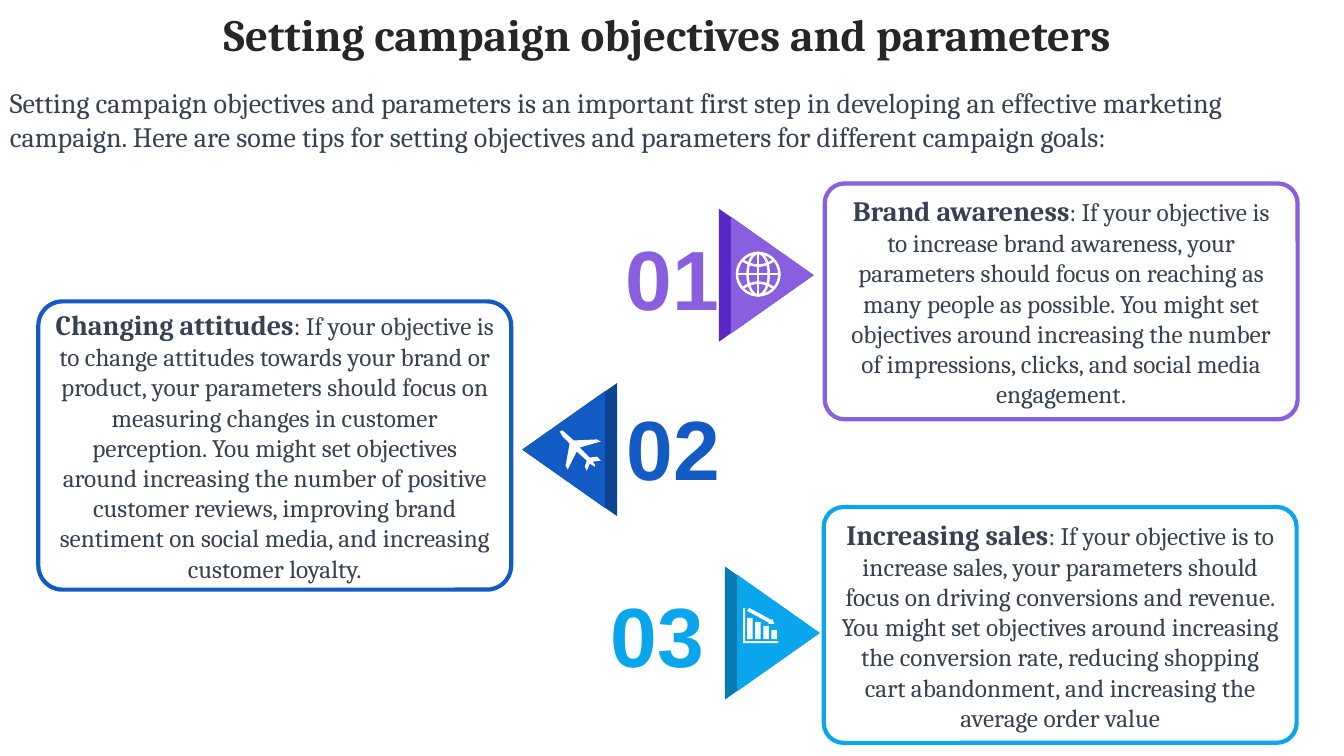
"""Builds a slide on setting campaign objectives and parameters."""
import math
import pptx
import pptx.util
import pptx.dml.color
import pptx.enum.shapes
import pptx.enum.text

Inches, Pt = pptx.util.Inches, pptx.util.Pt
MIDDLE = pptx.enum.text.MSO_ANCHOR.MIDDLE
CENTER = pptx.enum.text.PP_ALIGN.CENTER
SHAPES = pptx.enum.shapes.MSO_SHAPE

TITLE = "Setting campaign objectives and parameters"
INTRO = ("Setting campaign objectives and parameters is an important first step in developing "
         "an effective marketing campaign. Here are some tips for setting objectives and "
         "parameters for different campaign goals:")
INK, WHITE = "374151", "FFFFFF"

GOALS = [
    dict(number="03", color="0AA6ED", shade="087CB2", card=(8.17, 5.03, 4.69, 2.34),
         triangle=(7.66, 6.28), turn=90, label=(5.95, 5.73), name="Increasing sales",
         advice=": If your objective is to increase sales, your parameters should focus on "
                "driving conversions and revenue. You might set objectives around increasing "
                "the conversion rate, reducing shopping cart abandonment, and increasing the "
                "average order value"),
    dict(number="02", color="125AC4", shade="0D4393", card=(0.38, 2.99, 4.69, 2.86),
         triangle=(5.65, 4.46), turn=270, label=(6.11, 3.88), name="Changing attitudes",
         advice=": If your objective is to change attitudes towards your brand or product, your "
                "parameters should focus on measuring changes in customer perception. You might "
                "set objectives around increasing the number of positive customer reviews, "
                "improving brand sentiment on social media, and increasing customer loyalty."),
    dict(number="01", color="875FDF", shade="5928C7", card=(8.18, 1.82, 4.69, 2.34),
         triangle=(7.6, 2.73), turn=90, label=(6.1, 2.19), name="Brand awareness",
         advice=": If your objective is to increase brand awareness, your parameters should "
                "focus on reaching as many people as possible. You might set objectives around "
                "increasing the number of impressions, clicks, and social media engagement."),
]

BAR_TOPS = [6.13, 6.17, 6.21, 6.25]
CHART_AXES = [(7.37, 6.03), (7.39, 6.03), (7.39, 6.36), (7.72, 6.36), (7.72, 6.38), (7.37, 6.38)]
CHART_ARROW = [(7.43, 6.03), (7.65, 6.15), (7.66, 6.14), (7.68, 6.19), (7.62, 6.19),
               (7.63, 6.18), (7.41, 6.06)]
PLANE = [(5.96, 4.57), (5.88, 4.58), (5.9, 4.61), (5.9, 4.63), (5.85, 4.6), (5.82, 4.67),
         (5.8, 4.63), (5.82, 4.57), (5.72, 4.48), (5.63, 4.66), (5.61, 4.62), (5.65, 4.4),
         (5.58, 4.33), (5.55, 4.28), (5.58, 4.27), (5.69, 4.37), (5.92, 4.36), (5.96, 4.38),
         (5.75, 4.44), (5.85, 4.54), (5.92, 4.53)]
GLOBE_X, GLOBE_Y, GLOBE_RADIUS = 7.52, 2.72, 0.21


def rgb(color):
    return pptx.dml.color.RGBColor.from_string(color)


def style_shape(shape, fill=None, line=None, width=0):
    shape.shadow.inherit = False
    if fill:
        shape.fill.solid()
        shape.fill.fore_color.rgb = rgb(fill)
    else:
        shape.fill.background()
    if line:
        shape.line.color.rgb = rgb(line)
        shape.line.width = Pt(width)
    else:
        shape.line.fill.background()


def style_font(font, size, color, bold=False, name="Cambria"):
    font.name, font.size, font.bold = name, Pt(size), bold
    font.color.rgb = rgb(color)


def add_text(page, text, place, size, color, bold=False, name="Cambria"):
    box = page.shapes.add_textbox(*map(Inches, place))
    box.text_frame.word_wrap = True
    box.text_frame.text = text
    para = box.text_frame.paragraphs[0]
    style_font(para.runs[0].font, size, color, bold, name)
    return box.text_frame


def add_card(page, goal):
    card = page.shapes.add_shape(SHAPES.ROUNDED_RECTANGLE, *map(Inches, goal["card"]))
    card.adjustments[0] = 0.084
    style_shape(card, WHITE, goal["color"], 3)
    frame = card.text_frame
    frame.word_wrap, frame.vertical_anchor = True, MIDDLE
    para = frame.paragraphs[0]
    para.alignment = CENTER
    for text, size, bold in ((goal["name"], 20, True), (goal["advice"], 18, False)):
        span = para.add_run()
        span.text = text
        style_font(span.font, size, INK, bold)


def add_triangles(page, goal):
    x, y = goal["triangle"]
    toward_tip = 0.06 if goal["turn"] == 90 else -0.06
    for center, width, height, color in ((x, 1.32, 0.94, goal["shade"]),
                                         (x + toward_tip, 1.16, 0.82, goal["color"])):
        triangle = page.shapes.add_shape(
            SHAPES.ISOSCELES_TRIANGLE, Inches(center - width / 2), Inches(y - height / 2),
            Inches(width), Inches(height))
        triangle.rotation = goal["turn"]
        style_shape(triangle, color)


def add_outline(page, contours, closed=True):
    builder = None
    for contour in contours:
        points = [(Inches(x), Inches(y)) for x, y in contour]
        if builder is None:
            builder = page.shapes.build_freeform(*points[0], scale=1.0)
        else:
            builder.move_to(*points[0])
        builder.add_line_segments(points[1:], close=closed)
    return builder.convert_to_shape()


def ellipse(radius_x, radius_y, steps=48):
    angles = [2 * math.pi * step / steps for step in range(steps + 1)]
    return [(GLOBE_X + radius_x * math.cos(a), GLOBE_Y + radius_y * math.sin(a)) for a in angles]


def parallel(side):
    return [(GLOBE_X + 0.15 * t / 8, GLOBE_Y + side * (0.085 + 0.05 * (t / 8) ** 2))
            for t in range(-8, 9)]


def globe_lines():
    r = GLOBE_RADIUS
    return [ellipse(r, r), ellipse(0.105, r), parallel(-1), parallel(1),
            [(GLOBE_X - r, GLOBE_Y), (GLOBE_X + r, GLOBE_Y)],
            [(GLOBE_X, GLOBE_Y - r), (GLOBE_X, GLOBE_Y + r)]]


def chart_bars():
    lefts = [7.41 + 0.08 * index for index in range(len(BAR_TOPS))]
    return [[(x, top), (x + 0.055, top), (x + 0.055, 6.34), (x, 6.34)]
            for x, top in zip(lefts, BAR_TOPS)]


def main():
    deck = pptx.Presentation()
    deck.slide_width, deck.slide_height = Inches(13.33), Inches(7.5)
    page = deck.slides.add_slide(deck.slide_layouts[5])

    title = page.shapes.title
    title.left, title.top, title.width, title.height = map(Inches, (0.29, 0, 12.66, 0.74))
    title.text_frame.text = TITLE
    title.text_frame.vertical_anchor = MIDDLE
    heading = title.text_frame.paragraphs[0]
    heading.alignment, heading.line_spacing = CENTER, 0.9
    style_font(heading.runs[0].font, 32, "262626", True)

    for goal in GOALS:
        add_card(page, goal)
        add_triangles(page, goal)
        frame = add_text(page, goal["number"], (*goal["label"], 1.14, 1.11), 60,
                         goal["color"], True, "Arial")
        frame.vertical_anchor = MIDDLE
        frame.paragraphs[0].alignment = CENTER

    style_shape(add_outline(page, chart_bars() + [CHART_ARROW, CHART_AXES]), WHITE)
    style_shape(add_outline(page, globe_lines(), closed=False), line=WHITE, width=1.8)
    style_shape(add_outline(page, [PLANE]), WHITE)
    add_text(page, INTRO, (0, 0.8, 12.24, 1.11), 20, INK)
    deck.save("out.pptx")


if __name__ == "__main__":
    main()
